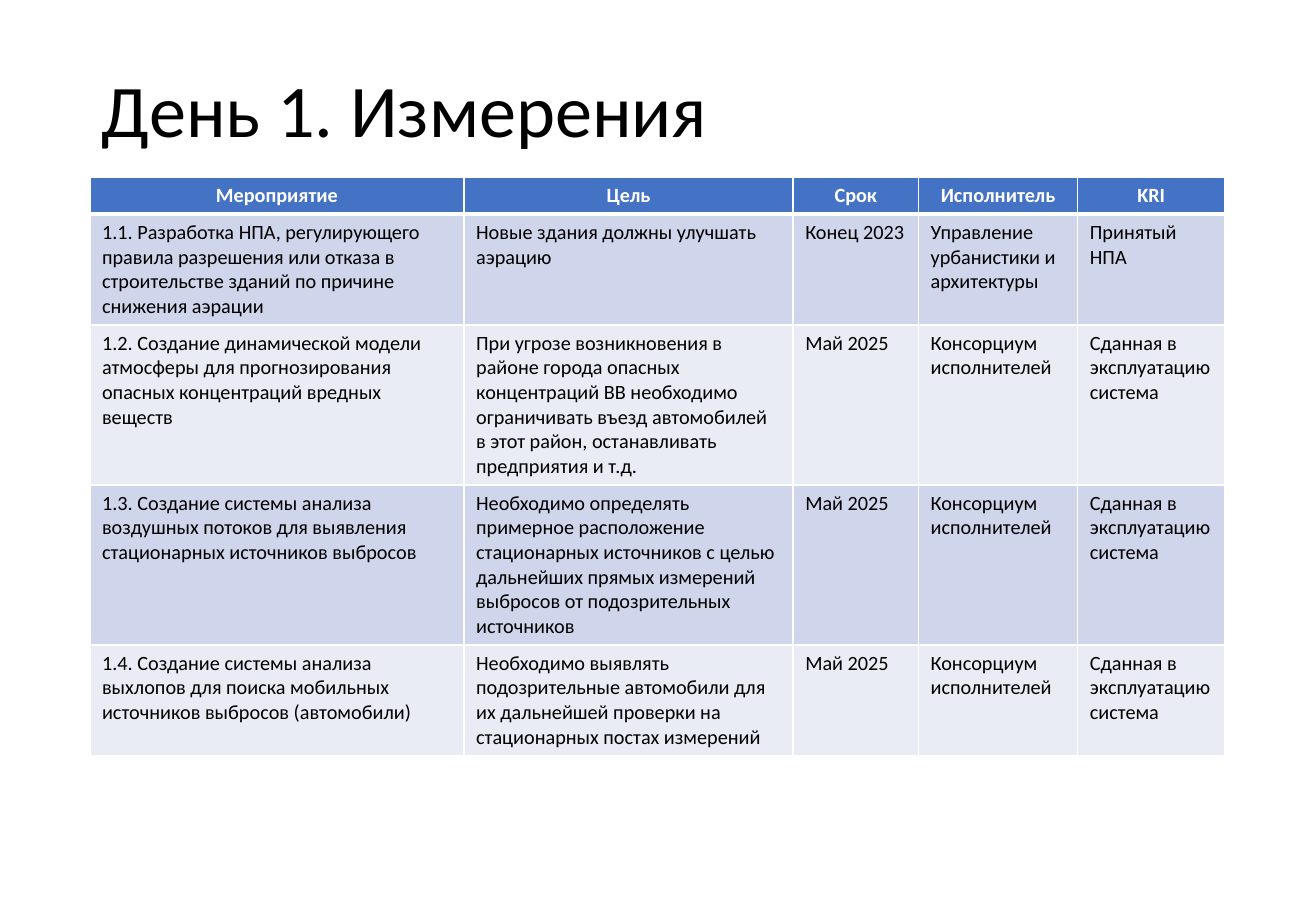
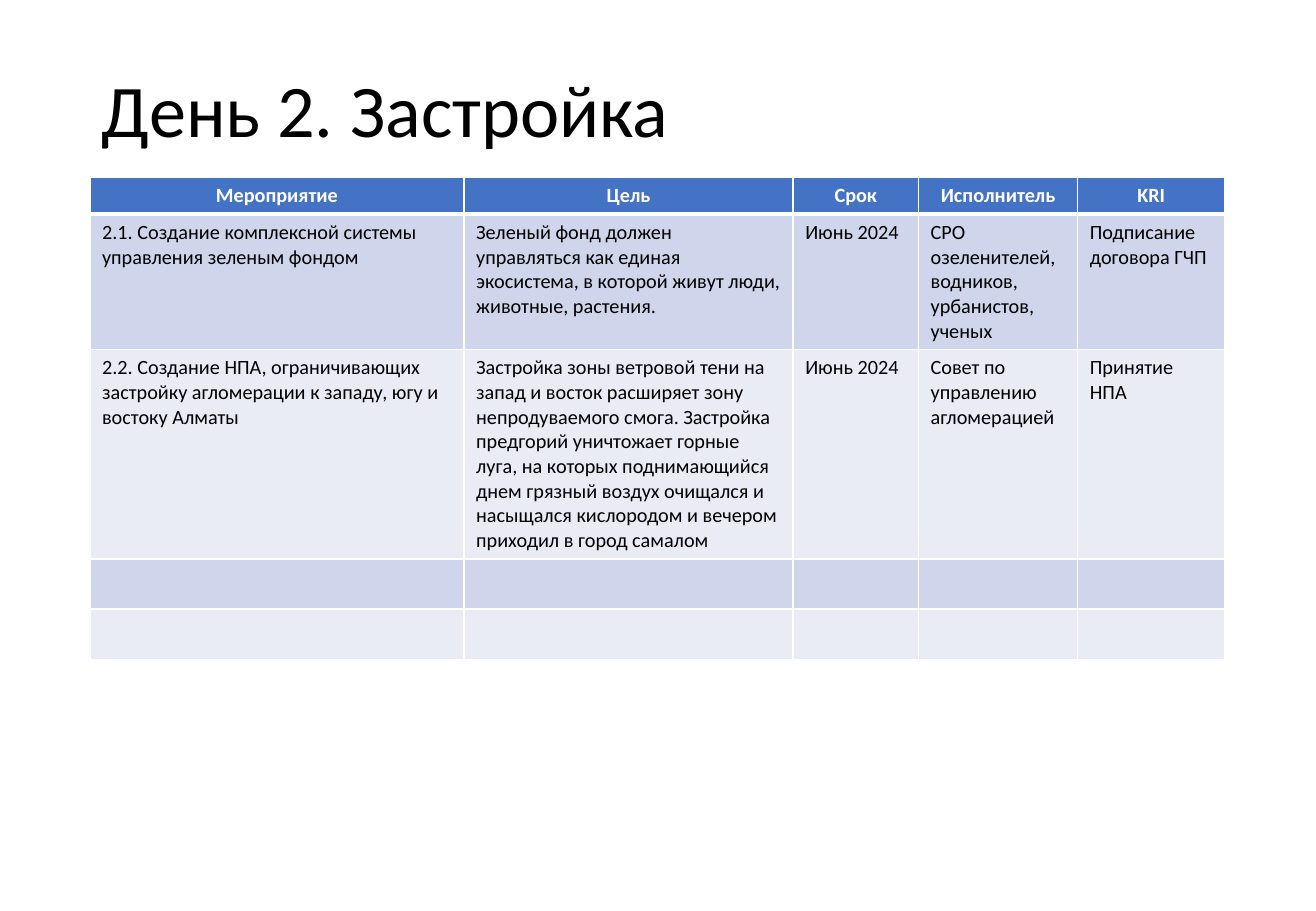
from lxml import etree
from pptx import Presentation
from pptx.dml.color import RGBColor
from pptx.enum.text import MSO_ANCHOR, PP_ALIGN
from pptx.oxml.ns import qn
from pptx.util import Cm, Pt

LEFT, CENTER = PP_ALIGN.LEFT, PP_ALIGN.CENTER
MIDDLE = MSO_ANCHOR.MIDDLE
FONT = "Calibri"
BLACK = RGBColor(0x00, 0x00, 0x00)
WHITE = RGBColor(0xFF, 0xFF, 0xFF)
BLUE = RGBColor(0x44, 0x72, 0xC4)
BANDS = [RGBColor(0xE9, 0xEB, 0xF5), RGBColor(0xCF, 0xD5, 0xEA)]

MARGIN_LEFT, CONTENT_WIDTH = 1.88, 23.72
TITLE_TOP, TITLE_HEIGHT = 1.02, 2.69
PLAN_TOP = TITLE_TOP + TITLE_HEIGHT
COLUMN_WIDTHS = [7.82, 6.88, 2.62, 3.33, 3.07]
HEADER_HEIGHT, MIN_ROW_HEIGHT = 0.77, 1.05
LINE_HEIGHT, CELL_PADDING = 0.516, 0.25

HEADINGS = ["Мероприятие", "Цель", "Срок", "Исполнитель", "KRI"]
CONSORTIUM = ["Май 2025", "Консорциум исполнителей", "Сданная в эксплуатацию система"]
EMPTY = [""] * len(HEADINGS)

DAYS = [
    ("День 1. Измерения", [4, 6, 6, 4], [
        ["1.1. Разработка НПА, регулирующего правила разрешения или отказа в "
         "строительстве зданий по причине снижения аэрации",
         "Новые здания должны улучшать аэрацию",
         "Конец 2023", "Управление урбанистики и архитектуры", "Принятый НПА"],
        ["1.2. Создание динамической модели атмосферы для прогнозирования "
         "опасных концентраций вредных веществ",
         "При угрозе возникновения в районе города опасных концентраций ВВ "
         "необходимо ограничивать въезд автомобилей в этот район, "
         "останавливать предприятия и т.д.", *CONSORTIUM],
        ["1.3. Создание системы анализа воздушных потоков для выявления "
         "стационарных источников выбросов",
         "Необходимо определять примерное расположение стационарных источников "
         "с целью дальнейших прямых измерений выбросов от подозрительных "
         "источников", *CONSORTIUM],
        ["1.4. Создание системы анализа выхлопов для поиска мобильных "
         "источников выбросов (автомобили)",
         "Необходимо выявлять подозрительные автомобили для их дальнейшей "
         "проверки на стационарных постах измерений", *CONSORTIUM],
    ]),
    ("День 2. Застройка", [5, 8, 1, 1], [
        ["2.1. Создание комплексной системы управления зеленым фондом",
         "Зеленый фонд должен управляться как единая экосистема, в которой "
         "живут люди, животные, растения.",
         "Июнь 2024", "СРО озеленителей, водников, урбанистов, ученых",
         "Подписание договора ГЧП"],
        ["2.2. Создание НПА, ограничивающих застройку агломерации к западу, "
         "югу и востоку Алматы",
         "Застройка зоны ветровой тени на запад и восток расширяет зону "
         "непродуваемого смога. Застройка предгорий уничтожает горные луга, "
         "на которых поднимающийся днем грязный воздух очищался и насыщался "
         "кислородом и вечером приходил в город самалом",
         "Июнь 2024", "Совет по управлению агломерацией", "Принятие НПА"],
        EMPTY,
        EMPTY,
    ]),
]


def write_text(frame, text, *, size=12, color=BLACK, bold=False, align=LEFT, spacing=1.0):
    paragraph = frame.paragraphs[0]
    paragraph.alignment = align
    paragraph.line_spacing = spacing
    run = paragraph.add_run()
    run.text = text
    run.font.name = FONT
    run.font.size = Pt(size)
    run.font.bold = bold
    run.font.color.rgb = color


def add_borders(cell, **widths):
    properties = cell._tc.get_or_add_tcPr()
    for side in "LRTB":
        line = etree.SubElement(properties, qn(f"a:ln{side}"), w=str(Pt(widths.get(side, 1))))
        fill = etree.SubElement(line, qn("a:solidFill"))
        etree.SubElement(fill, qn("a:srgbClr"), val=str(WHITE))


prs = Presentation()
prs.slide_width, prs.slide_height = Cm(27.51), Cm(19.05)
blank = prs.slide_layouts[6]

for day, line_counts, measures in DAYS:
    slide = prs.slides.add_slide(blank)
    title = slide.shapes.add_textbox(
        Cm(MARGIN_LEFT), Cm(TITLE_TOP), Cm(CONTENT_WIDTH), Cm(TITLE_HEIGHT)).text_frame
    title.word_wrap = True
    title.vertical_anchor = MIDDLE
    write_text(title, day, size=44, spacing=0.9)

    heights = [HEADER_HEIGHT] + [
        max(MIN_ROW_HEIGHT, count * LINE_HEIGHT + CELL_PADDING) for count in line_counts]
    plan = slide.shapes.add_table(
        len(heights), len(HEADINGS), Cm(MARGIN_LEFT), Cm(PLAN_TOP),
        Cm(CONTENT_WIDTH), Cm(sum(heights))).table
    for column, width in zip(plan.columns, COLUMN_WIDTHS):
        column.width = Cm(width)
    for row, height in zip(plan.rows, heights):
        row.height = Cm(height)

    for r, texts in enumerate([HEADINGS] + measures):
        for c, text in enumerate(texts):
            cell = plan.cell(r, c)
            add_borders(cell, T=3 if r == 1 else 1, B=3 if r == 0 else 1)
            cell.fill.solid()
            cell.fill.fore_color.rgb = BANDS[r % 2] if r else BLUE
            if r == 0:
                write_text(cell.text_frame, text, color=WHITE, bold=True, align=CENTER)
            elif text:
                write_text(cell.text_frame, text)

prs.save("out.pptx")
